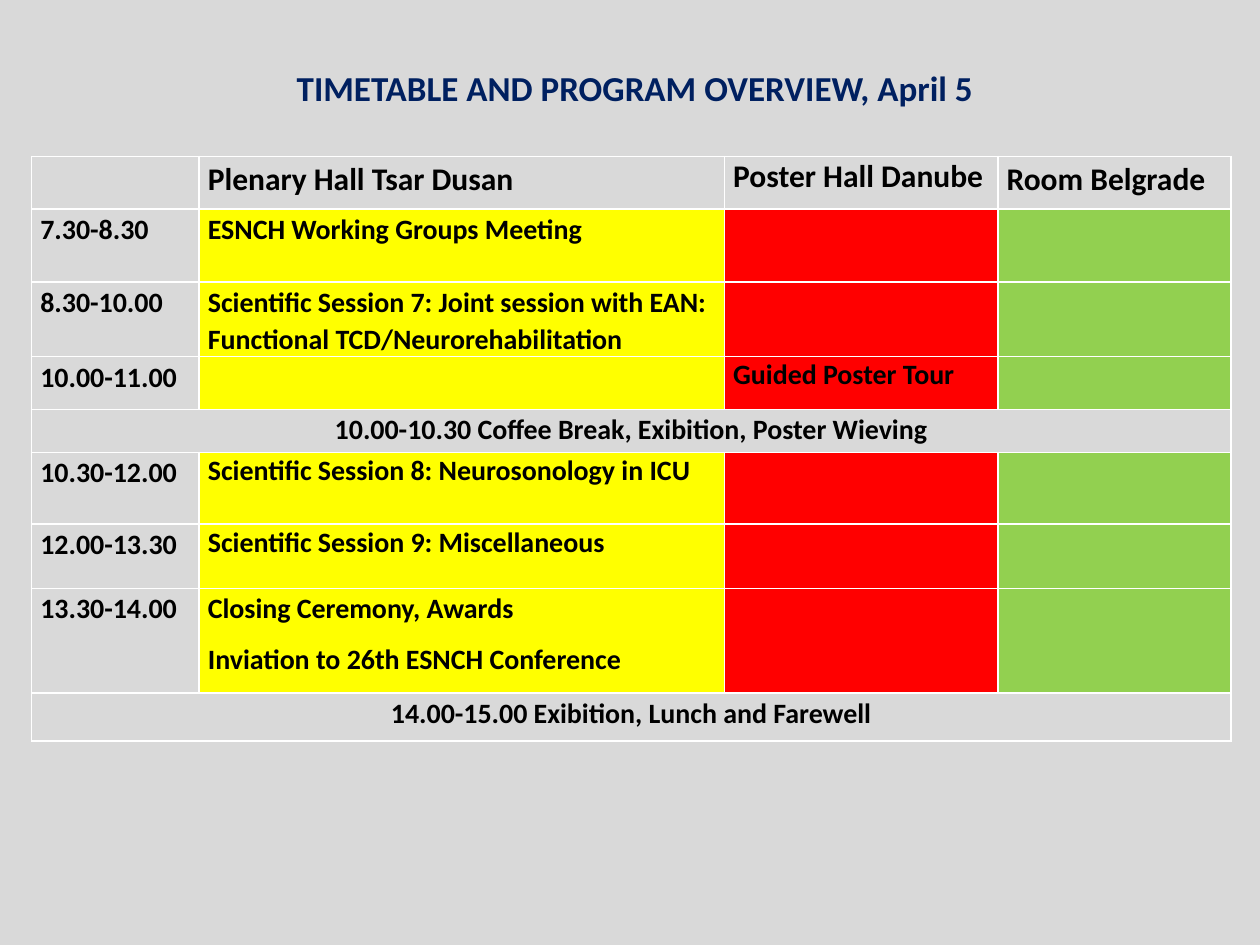
from lxml.etree import SubElement
from pptx import Presentation
from pptx.dml.color import RGBColor as RGB
from pptx.enum.text import MSO_ANCHOR as ANCHOR, PP_ALIGN as ALIGN
from pptx.oxml.ns import qn
from pptx.util import Inches, Pt

COLORS = {"grey": "D9D9D9", "yellow": "FFFF00", "red": "FF0000", "green": "92D050",
          "navy": "002060", "black": "000000", "white": "FFFFFF"}


def write(frame, text, size=16, color="black", align=ALIGN.LEFT, line=1.07, before=0, after=8):
    frame.text = text
    for paragraph in frame.paragraphs:
        paragraph.alignment = align
        paragraph.line_spacing = line
        paragraph.space_before, paragraph.space_after = Pt(before), Pt(after)
        for run in paragraph.runs:
            run.font.name, run.font.size, run.font.bold = "Calibri", Pt(size), True
            run.font.color.rgb = RGB.from_string(COLORS[color])


def draw_borders(cell):
    for side in ("a:lnL", "a:lnR", "a:lnT", "a:lnB"):
        border = SubElement(cell._tc.get_or_add_tcPr(), qn(side), w=str(Pt(1)))
        paint = SubElement(border, qn("a:solidFill"))
        SubElement(paint, qn("a:srgbClr"), val=COLORS["white"])


deck = Presentation()
deck.slide_width, deck.slide_height = Inches(10), Inches(7.5)
slide = deck.slides.add_slide(deck.slide_layouts[5])
slide.background.fill.solid()
slide.background.fill.fore_color.rgb = RGB.from_string(COLORS["grey"])

title = slide.shapes.title
title.left, title.top, title.width, title.height = Inches(1.5), 0, Inches(7.08), Inches(0.91)
title.text_frame.vertical_anchor = ANCHOR.BOTTOM
write(title.text_frame, "TIMETABLE AND PROGRAM OVERVIEW, April 5", size=20, color="navy",
      align=ALIGN.CENTER, line=1.0, before=6, after=6)

program = [
    ["", "Plenary Hall Tsar Dusan", "Poster Hall Danube", "Room Belgrade"],
    ["7.30-8.30", "ESNCH Working Groups Meeting", "", ""],
    ["8.30-10.00", "Scientific Session 7: Joint session with EAN: "
                   "Functional TCD/Neurorehabilitation", "", ""],
    ["10.00-11.00", "", "Guided Poster Tour", ""],
    ["10.00-10.30 Coffee Break, Exibition, Poster Wieving"],
    ["10.30-12.00", "Scientific Session 8: Neurosonology in ICU", "", ""],
    ["12.00-13.30", "Scientific Session 9: Miscellaneous", "", ""],
    ["13.30-14.00", "Closing Ceremony, Awards\nInviation to 26th ESNCH Conference", "", ""],
    ["14.00-15.00 Exibition, Lunch and Farewell"],
]
tight_cells = {(0, 2), (3, 2), (5, 1), (6, 1)}
column_widths = [1.33, 4.17, 2.17, 1.85]
row_heights = [0.42, 0.58, 0.58, 0.42, 0.34, 0.57, 0.51, 0.83, 0.38]
room_colors = ["grey", "yellow", "red", "green"]

timetable = slide.shapes.add_table(
    len(row_heights), len(column_widths), Inches(0.25), Inches(1.24),
    Inches(sum(column_widths)), Inches(sum(row_heights))).table
timetable.first_row = timetable.horz_banding = False
for column, width in zip(timetable.columns, column_widths):
    column.width = Inches(width)

for r, (entries, height) in enumerate(zip(program, row_heights)):
    timetable.rows[r].height = Inches(height)
    is_break = len(entries) == 1
    for c, room_color in enumerate(room_colors):
        cell = timetable.cell(r, c)
        cell.margin_left = cell.margin_right = Inches(0.07)
        cell.margin_top, cell.margin_bottom = Inches(0.01), 0
        draw_borders(cell)
        cell.fill.solid()
        fill = "grey" if r == 0 or is_break else room_color
        cell.fill.fore_color.rgb = RGB.from_string(COLORS[fill])
        if c < len(entries) and entries[c]:
            tight = (r, c) in tight_cells
            write(cell.text_frame, entries[c], size=18 if r == 0 else 16,
                  align=ALIGN.CENTER if is_break else ALIGN.LEFT,
                  line=1.0 if tight else 1.07, after=0 if tight else 8)
    if is_break:
        timetable.cell(r, 0).merge(timetable.cell(r, len(room_colors) - 1))

deck.save("out.pptx")
